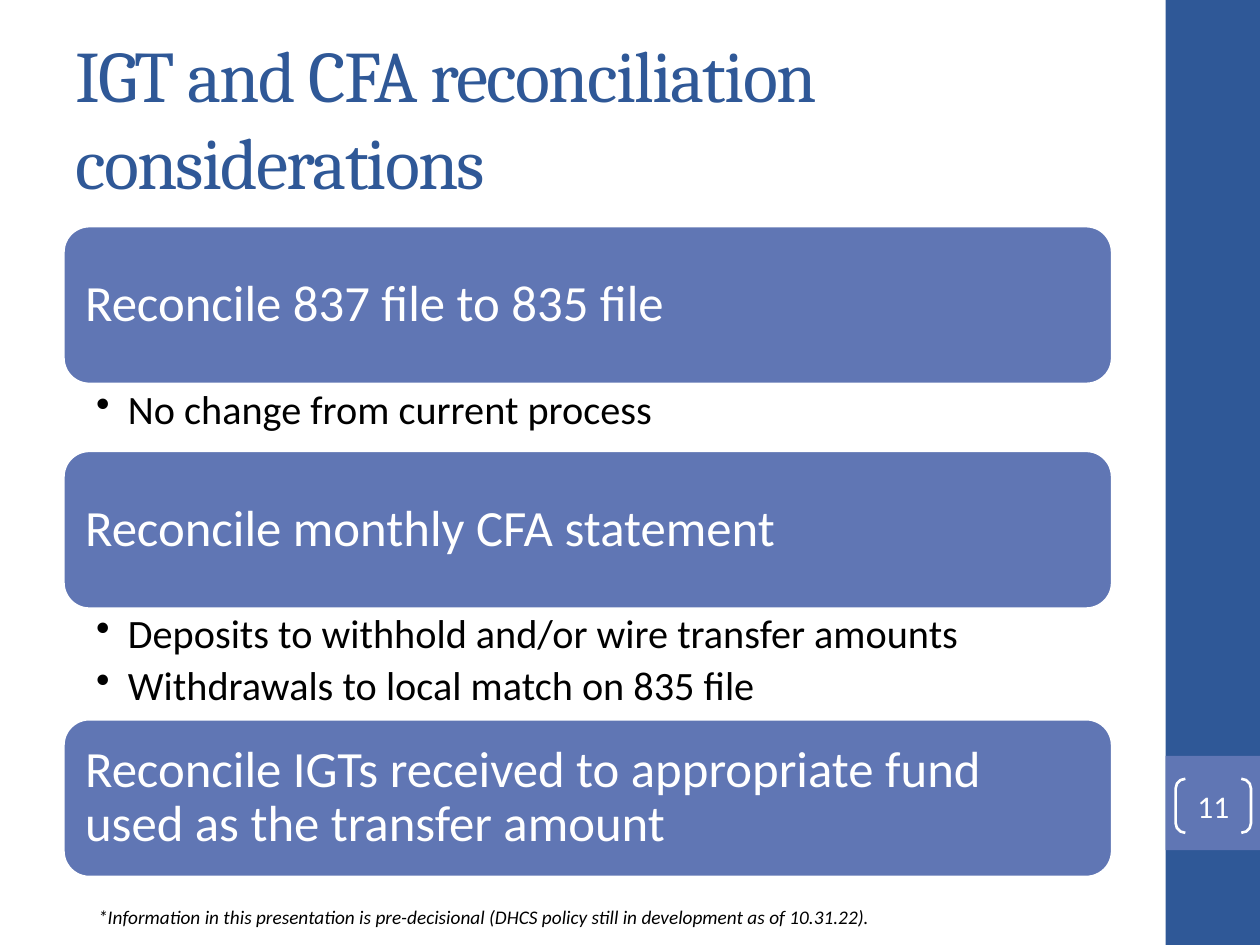
import pptx
import pptx.util
import pptx.dml.color
import pptx.enum.shapes
import pptx.enum.text
import pptx.oxml.ns
import lxml.etree

Cm, Pt = pptx.util.Cm, pptx.util.Pt
SHAPE = pptx.enum.shapes.MSO_SHAPE
ALIGN = pptx.enum.text.PP_ALIGN
ANCHOR = pptx.enum.text.MSO_ANCHOR

# Content
TITLE = "IGT and CFA reconciliation considerations"
SECTIONS = [
    ("Reconcile 837 file to 835 file", ["No change from current process"]),
    ("Reconcile monthly CFA statement",
     ["Deposits to withhold and/or wire transfer amounts",
      "Withdrawals to local match on 835 file"]),
    ("Reconcile IGTs received to appropriate fund used as the transfer amount", []),
]
FOOTNOTE = ("*Information in this presentation is pre-decisional "
            "(DHCS policy still in development as of 10.31.22).")
PAGE = "11"

THEME = {
    "navy": "2F5897", "blue": "6076B4", "white": "FFFFFF", "black": "000000",
    "head": "Cambria", "body": "Calibri",
    "title": 41.4, "bar": 29, "bullet": 23, "page": 18, "note": 11,
}

# Layout in centimetres
LEFT, WIDTH, BAR_H, FIRST_TOP = 1.27, 21.16, 3.2, 4.55
BULLETS_H = {0: 0, 1: 1.33, 2: 2.21}
SIDE_X, SIDE_W = 23.5, 1.9


def color(name):
    return pptx.dml.color.RGBColor.from_string(THEME[name])


def add_shape(kind, x, y, w, h, fill=None, line=None, weight=1):
    sp = s.shapes.add_shape(kind, Cm(x), Cm(y), Cm(w), Cm(h))
    sp.shadow.inherit = False
    if fill:
        sp.fill.solid()
        sp.fill.fore_color.rgb = color(fill)
    else:
        sp.fill.background()
    if line:
        sp.line.color.rgb = color(line)
        sp.line.width = Pt(weight)
    else:
        sp.line.fill.background()
    return sp


def set_frame(sp, anchor, insets):
    tf = sp.text_frame
    tf.word_wrap = True
    tf.vertical_anchor = anchor
    tf.margin_left, tf.margin_top, tf.margin_right, tf.margin_bottom = map(Cm, insets)
    return tf


def add_text(x, y, w, h, anchor=ANCHOR.TOP, insets=(0.25, 0.13, 0.25, 0.13)):
    return set_frame(s.shapes.add_textbox(Cm(x), Cm(y), Cm(w), Cm(h)), anchor, insets)


def add_run(p, text, size, ink, font="body", align=ALIGN.LEFT):
    p.alignment = align
    r = p.add_run()
    r.text = text
    r.font.size = Pt(THEME[size])
    r.font.name = THEME[font]
    r.font.color.rgb = color(ink)
    return r


def add_bullet(p, indent):
    pPr = p._p.get_or_add_pPr()
    pPr.set("marL", str(Cm(indent)))
    pPr.set("indent", str(-Cm(indent)))
    lxml.etree.SubElement(pPr, pptx.oxml.ns.qn("a:buChar")).set("char", "•")


prs = pptx.Presentation()
prs.slide_width, prs.slide_height = Cm(25.4), Cm(19.05)
s = prs.slides.add_slide(prs.slide_layouts[6])

# Side band and page number block
add_shape(SHAPE.RECTANGLE, SIDE_X, 0, SIDE_W, 19.05, "navy")
add_shape(SHAPE.RECTANGLE, SIDE_X, 15.24, SIDE_W, 1.9, "blue")

# Footnote
tf = add_text(1.73, 18.11, 20.98, 0.74)
add_run(tf.paragraphs[0], FOOTNOTE, "note", "black").font.italic = True

# Title
tf = add_text(LEFT, 0.76, WIDTH, 3.18, ANCHOR.MIDDLE)
r = add_run(tf.paragraphs[0], TITLE, "title", "navy", "head")
r._r.get_or_add_rPr().set("spc", "-100")

# Bars, each followed by its bullets
top = FIRST_TOP
for heading, bullets in SECTIONS:
    bar = add_shape(SHAPE.ROUNDED_RECTANGLE, LEFT, top, WIDTH, BAR_H, "blue", "white", 2)
    # The rounded preset already insets its text by about 0.16 cm
    tf = set_frame(bar, ANCHOR.MIDDLE, (0.29, 0.29, 0.29, 0.29))
    p = tf.paragraphs[0]
    p.line_spacing = 0.9
    add_run(p, heading, "bar", "white")
    top += BAR_H

    height = BULLETS_H[len(bullets)]
    if bullets:
        tf = add_text(LEFT, top, WIDTH, height, insets=(0.67, 0.1, 0.58, 0.1))
    for i, text in enumerate(bullets):
        p = tf.add_paragraph() if i else tf.paragraphs[0]
        p.line_spacing = 0.9
        p.space_after = Pt(4.6)
        add_bullet(p, 0.64)
        add_run(p, text, "bullet", "black")
    top += height

# Page number in brackets
sp = add_shape(SHAPE.DOUBLE_BRACKET, 23.7, 15.7, 1.52, 1.09, None, "white", 1.5)
sp.adjustments[0] = 0.18
tf = set_frame(sp, ANCHOR.MIDDLE, (0, 0, 0, 0))
add_run(tf.paragraphs[0], PAGE, "page", "white", align=ALIGN.CENTER)

prs.save("out.pptx")
